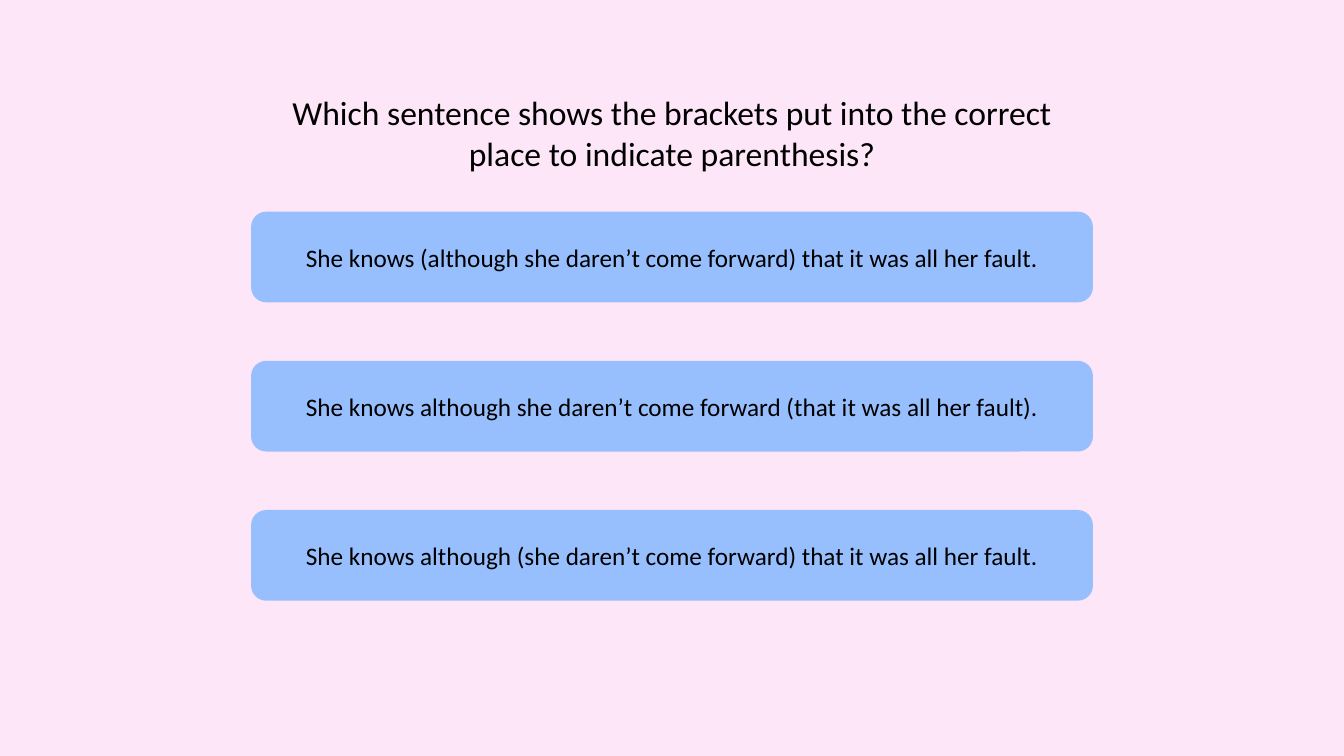
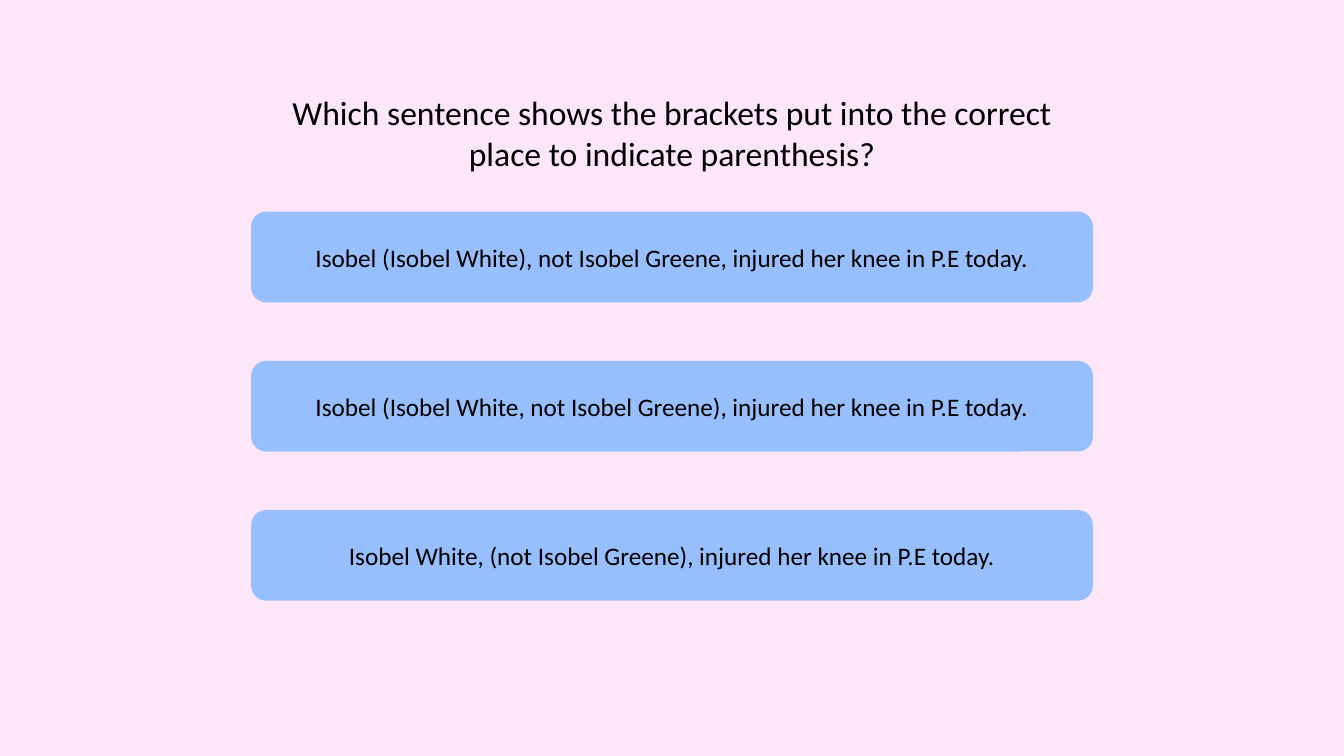
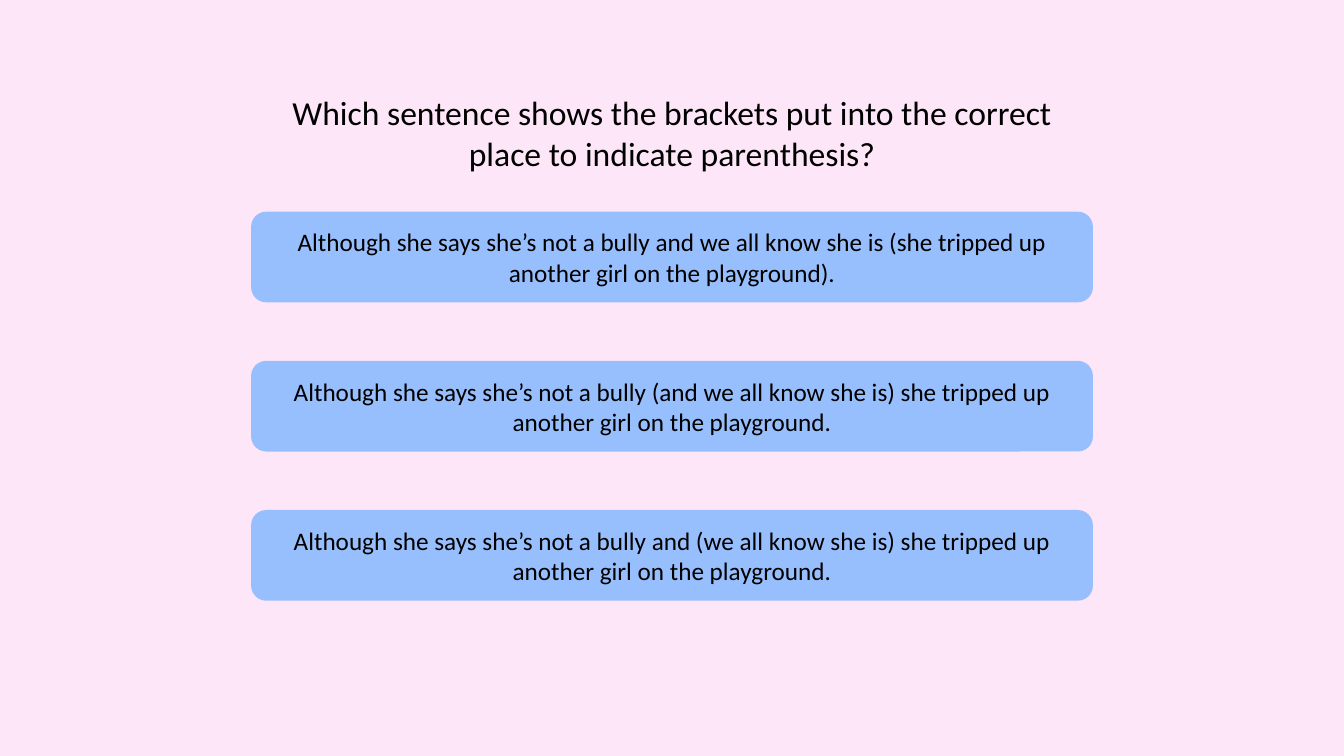
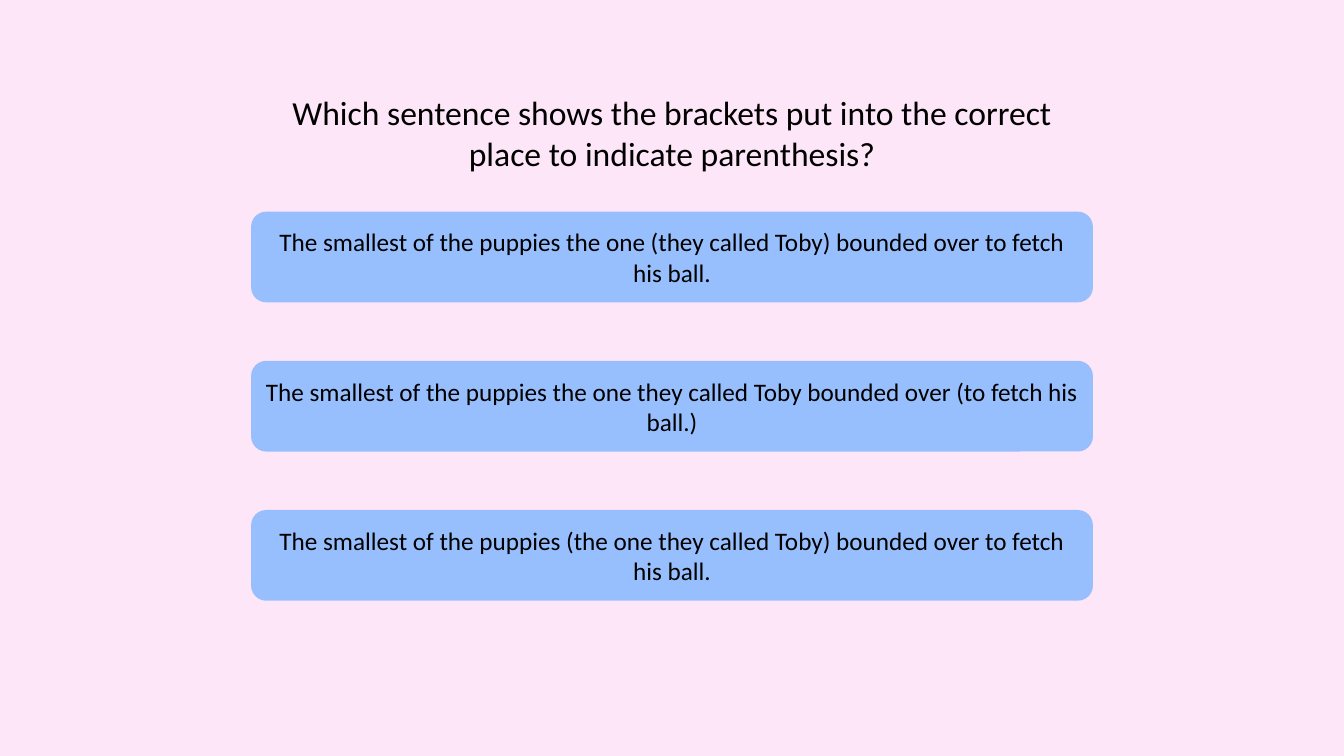
from dataclasses import dataclass

from lxml import etree
from pptx import Presentation
from pptx.dml.color import RGBColor
from pptx.enum.shapes import MSO_SHAPE
from pptx.enum.text import MSO_ANCHOR, MSO_AUTO_SIZE, PP_ALIGN
from pptx.oxml.ns import qn
from pptx.util import Inches, Pt

ROUNDED = MSO_SHAPE.ROUNDED_RECTANGLE
MIDDLE = MSO_ANCHOR.MIDDLE
CENTER = PP_ALIGN.CENTER
NO_AUTOFIT = MSO_AUTO_SIZE.NONE
TITLE_ONLY = 5


@dataclass(frozen=True)
class Theme:
    font: str = "Calibri"
    background: RGBColor = RGBColor(0xFE, 0xE6, 0xF9)
    answer_fill: RGBColor = RGBColor(0x6D, 0xAF, 0xFF)
    answer_opacity: int = 70
    text: RGBColor = RGBColor(0, 0, 0)
    question_size: int = 24
    answer_size: int = 18


# Column shared by the question and its answers, in inches
COLUMN_LEFT, COLUMN_WIDTH = 2.49, 8.35
QUESTION_TOP, QUESTION_HEIGHT = 0.8, 1.03
ANSWER_TOP, ANSWER_HEIGHT, ANSWER_PITCH = 2.1, 0.9, 1.48

# Quiz content
QUESTION = "Which sentence shows the brackets put into the correct place to indicate parenthesis?"
ANSWER_SETS = [
    [
        "She knows (although she daren’t come forward) that it was all her fault.",
        "She knows although she daren’t come forward (that it was all her fault).",
        "She knows although (she daren’t come forward) that it was all her fault.",
    ],
    [
        "Isobel (Isobel White), not Isobel Greene, injured her knee in P.E today.",
        "Isobel (Isobel White, not Isobel Greene), injured her knee in P.E today.",
        "Isobel White, (not Isobel Greene), injured her knee in P.E today.",
    ],
    [
        "Although she says she’s not a bully and we all know she is (she tripped up another girl on the playground).",
        "Although she says she’s not a bully (and we all know she is) she tripped up another girl on the playground.",
        "Although she says she’s not a bully and (we all know she is) she tripped up another girl on the playground.",
    ],
    [
        "The smallest of the puppies the one (they called Toby) bounded over to fetch his ball.",
        "The smallest of the puppies the one they called Toby bounded over (to fetch his ball.)",
        "The smallest of the puppies (the one they called Toby) bounded over to fetch his ball.",
    ],
]


class Quiz:
    """Holds the style and the slide being built."""

    def __init__(self, theme):
        self.theme = theme
        self.prs = Presentation()
        self.prs.slide_width, self.prs.slide_height = Inches(13.33), Inches(7.5)
        backdrop = self.prs.slide_master.background.fill
        backdrop.solid()
        backdrop.fore_color.rgb = theme.background
        self.slide = None

    def new_slide(self):
        self.slide = self.prs.slides.add_slide(self.prs.slide_layouts[TITLE_ONLY])

    def set_text(self, shape, text, size):
        frame = shape.text_frame
        frame.text = text
        frame.word_wrap = True
        frame.auto_size = NO_AUTOFIT
        frame.vertical_anchor = MIDDLE
        paragraph = frame.paragraphs[0]
        paragraph.alignment = CENTER
        font = paragraph.font
        font.name, font.size = self.theme.font, Pt(size)
        font.color.rgb = self.theme.text

    def question(self, text):
        title = self.slide.shapes.title
        title.left, title.top = Inches(COLUMN_LEFT), Inches(QUESTION_TOP)
        title.width, title.height = Inches(COLUMN_WIDTH), Inches(QUESTION_HEIGHT)
        self.set_text(title, text, self.theme.question_size)
        frame = title.text_frame
        frame.margin_left = frame.margin_right = Inches(0.15)

    def answer(self, position, text):
        top = ANSWER_TOP + position * ANSWER_PITCH
        box = self.slide.shapes.add_shape(
            ROUNDED, Inches(COLUMN_LEFT), Inches(top), Inches(COLUMN_WIDTH), Inches(ANSWER_HEIGHT))
        box.shadow.inherit = False
        box.line.fill.background()
        box.fill.solid()
        box.fill.fore_color.rgb = self.theme.answer_fill
        # Transparency of the fill
        color = box.element.spPr.find(qn("a:solidFill")).find(qn("a:srgbClr"))
        etree.SubElement(color, qn("a:alpha"), val=str(self.theme.answer_opacity * 1000))
        self.set_text(box, text, self.theme.answer_size)


def main():
    quiz = Quiz(Theme())
    for answers in ANSWER_SETS:
        quiz.new_slide()
        quiz.question(QUESTION)
        for position, text in enumerate(answers):
            quiz.answer(position, text)
    quiz.prs.save("out.pptx")


if __name__ == "__main__":
    main()
